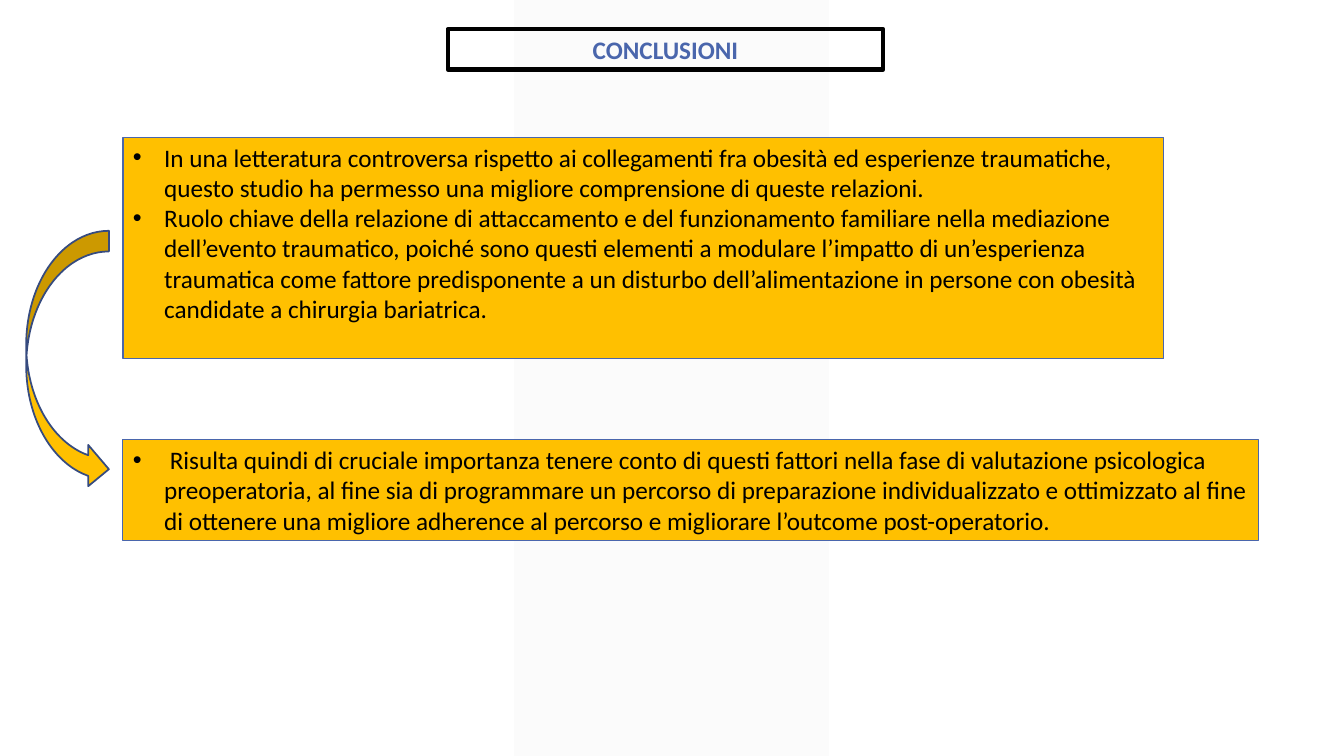
"""Builds the conclusions slide."""
from pptx import Presentation
from pptx import util as u
from pptx.dml.color import RGBColor
from pptx.enum import shapes, text
from pptx.oxml.ns import qn
from lxml import etree

PX = 9144
HUES = {"band": "F2F2F2", "gold": "FFC000", "blue": "4A66AC",
        "navy": "364B7F", "black": "000000"}
KIND = shapes.MSO_SHAPE

FINDINGS = [
    "In una letteratura controversa rispetto ai collegamenti fra obesità ed "
    "esperienze traumatiche, questo studio ha permesso una migliore "
    "comprensione di queste relazioni.",
    "Ruolo chiave della relazione di attaccamento e del funzionamento "
    "familiare nella mediazione dell’evento traumatico, poiché sono questi "
    "elementi a modulare l’impatto di un’esperienza traumatica come fattore "
    "predisponente a un disturbo dell’alimentazione in persone con obesità "
    "candidate a chirurgia bariatrica.",
]
OUTCOME = [
    " Risulta quindi di cruciale importanza tenere conto di questi fattori "
    "nella fase di valutazione psicologica preoperatoria, al fine sia di "
    "programmare un percorso di preparazione individualizzato e ottimizzato "
    "al fine di ottenere una migliore adherence al percorso e migliorare "
    "l’outcome post-operatorio.",
]


class Deck:
    """Holds the style and the current slide."""

    def __init__(self, wide, high):
        self.prs = Presentation()
        self.prs.slide_width, self.prs.slide_height = wide * PX, high * PX
        self.slide = self.prs.slides.add_slide(self.prs.slide_layouts[6])
        self.font, self.size = "Calibri", u.Pt(18)

    def shape(self, kind, box, fill=None, line=None, width=0.75):
        """Adds a preset shape."""
        item = self.slide.shapes.add_shape(kind, *(n * PX for n in box))
        item.shadow.inherit = False
        if fill:
            item.fill.solid()
            item.fill.fore_color.rgb = RGBColor.from_string(HUES[fill])
        else:
            item.fill.background()
        if line:
            item.line.color.rgb = RGBColor.from_string(HUES[line])
            item.line.width = u.Pt(width)
        else:
            item.line.fill.background()
        return item

    def band(self, box):
        """Adds the pale translucent band."""
        item = self.shape(KIND.RECTANGLE, box, "band")
        props = item.element.spPr
        color = props.find(qn("a:solidFill")).find(qn("a:srgbClr"))
        etree.SubElement(color, qn("a:alpha"), val="30000")

    def label(self, item, lines, hue, align, bold=False):
        """Puts styled paragraphs into a shape."""
        frame = item.text_frame
        frame.word_wrap = True
        frame.vertical_anchor = text.MSO_ANCHOR.TOP
        frame.text = "\n".join(lines)
        for para in frame.paragraphs:
            para.alignment = align
            para.font.name, para.font.size = self.font, self.size
            para.font.bold = bold
            para.font.color.rgb = RGBColor.from_string(HUES[hue])
        return frame

    def title(self, box, words):
        """Adds the framed title."""
        item = self.shape(KIND.RECTANGLE, box, line="black", width=3)
        self.label(item, [words], "blue", text.PP_ALIGN.CENTER, True)

    def bullets(self, box, lines):
        """Adds a gold panel with bulleted text."""
        item = self.shape(KIND.RECTANGLE, box, "gold", "blue")
        frame = self.label(item, lines, "black", text.PP_ALIGN.LEFT)
        for para in frame.paragraphs:
            props = para._p.get_or_add_pPr()
            props.set("marL", str(31 * PX))
            props.set("indent", str(-31 * PX))
            mark = etree.Element(qn("a:buFont"), typeface="Arial")
            props.insert(0, mark)
            mark.addnext(etree.Element(qn("a:buChar"), char="•"))

    def arrow(self, box):
        """Adds the curved arrow."""
        self.shape(KIND.CURVED_RIGHT_ARROW, box, "gold", "navy", 1.25)


def main():
    """Builds and saves the slide."""
    deck = Deck(1333, 750)
    deck.band((510, 0, 312, 750))
    deck.title((444, 29, 432, 40), "CONCLUSIONI")
    deck.bullets((122, 136, 1032, 220), FINDINGS)
    deck.bullets((122, 436, 1126, 100), OUTCOME)
    deck.arrow((26, 229, 82, 257))
    deck.prs.save("out.pptx")


if __name__ == "__main__":
    main()
